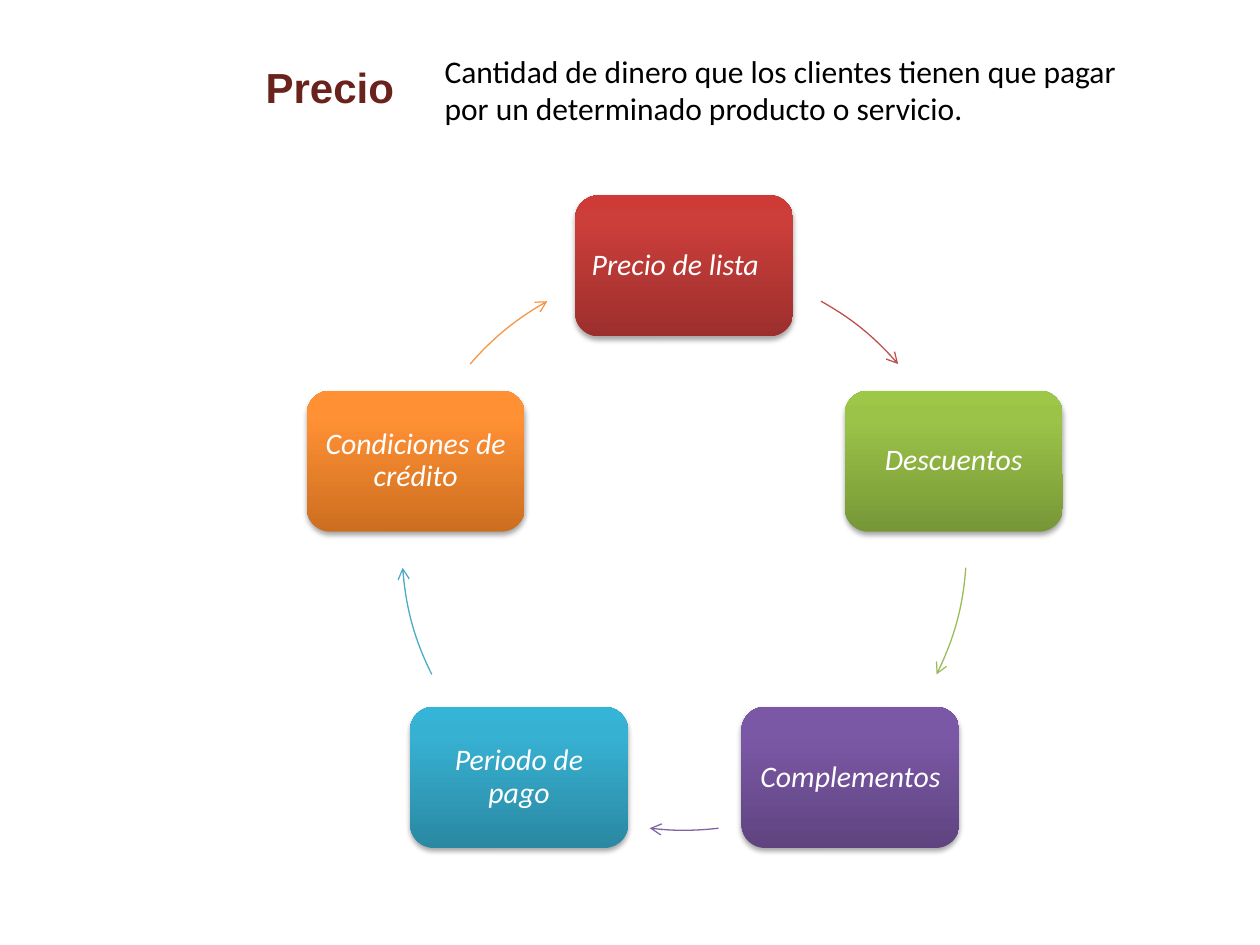
from copy import deepcopy

from lxml import etree
from pptx import Presentation
from pptx.dml.color import RGBColor
from pptx.enum.shapes import MSO_SHAPE
from pptx.enum.text import MSO_ANCHOR, PP_ALIGN
from pptx.oxml import parse_xml
from pptx.oxml.ns import qn
from pptx.util import Inches, Pt

ROUNDED = MSO_SHAPE.ROUNDED_RECTANGLE
ARC = MSO_SHAPE.ARC
CENTER = PP_ALIGN.CENTER
LEFT = PP_ALIGN.LEFT
MIDDLE = MSO_ANCHOR.MIDDLE
TOP = MSO_ANCHOR.TOP

COLORS = {
    "title": "6A221D",
    "body": "000000",
    "label": "FFFFFF",
}
SHADOW = (
    '<a:outerShdw xmlns:a="http://schemas.openxmlformats.org/drawingml/2006/main" '
    'blurRad="40000" dist="23000" dir="5400000" rotWithShape="0">'
    '<a:srgbClr val="000000"><a:alpha val="35000"/></a:srgbClr></a:outerShdw>'
)

# Circle on which the five steps and the arcs between them lie
CENTER_X, CENTER_Y, RADIUS = 5.43, 4.35, 2.24
BOX_WIDTH, BOX_HEIGHT = 1.73, 1.12

# Label, box centre, gradient from bottom to top, colour and angles of the
# arc to the next step (degrees clockwise from three o'clock), right inset
STEPS = [
    ("Precio de lista", 5.43, 2.11, ("9C2F2D", "CB3E3A", "CE3B37"), "C0504D", 299, 319.3, 0.21),
    ("Descuentos", 7.57, 3.66, ("779737", "9BC348", "9DC746"), "9BBB59", 4, 26.6, 0.07),
    ("Complementos", 6.75, 6.17, ("5F4480", "7B58A6", "7C57A8"), "8064A2", 83, 97, 0.07),
    ("Periodo de pago", 4.12, 6.17, ("2A88A2", "37B1D2", "34B4D6"), "4BACC6", 153.4, 176, 0.07),
    ("Condiciones de crédito", 3.30, 3.66, ("CC6E20", "FF9034", "FF9136"), "F79646", 220.7, 241, 0.07),
]


def write_text(shape, text, font="Calibri", size=18, color="body", bold=False,
               italic=False, align=LEFT, anchor=TOP, wrap=True, spacing=1.0):
    frame = shape.text_frame
    frame.word_wrap = wrap
    frame.vertical_anchor = anchor
    paragraph = frame.paragraphs[0]
    paragraph.alignment = align
    paragraph.line_spacing = spacing
    run = paragraph.add_run()
    run.text = text
    run.font.name = font
    run.font.size = Pt(size)
    run.font.bold = bold
    run.font.italic = italic
    run.font.color.rgb = RGBColor.from_string(COLORS[color])


def fill_gradient(shape, colors):
    """Fill from bottom to top with three stops at 0, 80 and 100 %."""
    shape.fill.gradient()
    shape.fill.gradient_angle = 90
    stop_list = shape.element.spPr.find(".//" + qn("a:gsLst"))
    stop_list.append(deepcopy(stop_list[-1]))
    for stop, color, position in zip(shape.fill.gradient_stops, colors, (0, 0.8, 1)):
        stop.color.rgb = RGBColor.from_string(color)
        stop.position = position


presentation = Presentation()
presentation.slide_width = Inches(10)
presentation.slide_height = Inches(7.5)
slide = presentation.slides.add_slide(presentation.slide_layouts[6])
shapes = slide.shapes

for label, x, y, gradient, arc_color, start, end, right_inset in STEPS:
    box = shapes.add_shape(
        ROUNDED, Inches(x - BOX_WIDTH / 2), Inches(y - BOX_HEIGHT / 2),
        Inches(BOX_WIDTH), Inches(BOX_HEIGHT))
    fill_gradient(box, gradient)
    box.line.fill.background()
    box.shadow.inherit = False
    box.element.spPr.find(qn("a:effectLst")).append(parse_xml(SHADOW))
    frame = box.text_frame
    frame.margin_left = frame.margin_top = frame.margin_bottom = Inches(0.07)
    frame.margin_right = Inches(right_inset)
    write_text(box, label, size=17, color="label", italic=True,
               align=CENTER, anchor=MIDDLE, spacing=0.9)

    arc = shapes.add_shape(
        ARC, Inches(CENTER_X - RADIUS), Inches(CENTER_Y - RADIUS),
        Inches(2 * RADIUS), Inches(2 * RADIUS))
    # Angles are stored in 60000ths of a degree, adjustments in 100000ths
    arc.adjustments[0] = start * 0.6
    arc.adjustments[1] = end * 0.6
    arc.fill.background()
    arc.shadow.inherit = False
    arc.line.color.rgb = RGBColor.from_string(arc_color)
    arc.line.width = Pt(0.75)
    etree.SubElement(arc.element.spPr.find(qn("a:ln")), qn("a:tailEnd"), type="arrow")

title = shapes.add_textbox(Inches(2.01), Inches(0.44), Inches(1.23), Inches(0.5))
write_text(title, "Precio", font="Arial", size=24, color="title", bold=True, wrap=False)

definition = shapes.add_textbox(Inches(3.43), Inches(0.36), Inches(5.75), Inches(0.71))
write_text(definition, "Cantidad de dinero que los clientes tienen que pagar "
                       "por un determinado producto o servicio.")

presentation.save("out.pptx")
